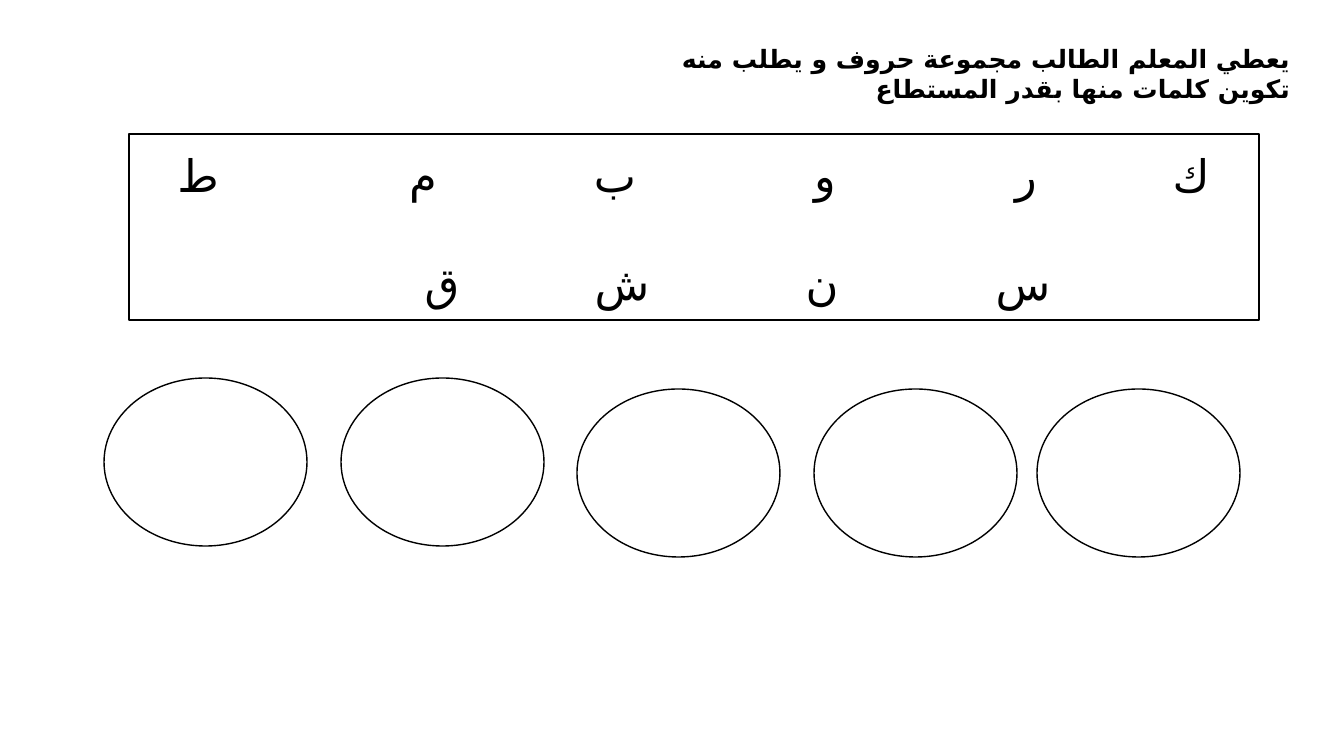
from dataclasses import dataclass

from lxml.etree import SubElement
from pptx import Presentation
from pptx.dml.color import RGBColor
from pptx.enum.shapes import MSO_SHAPE
from pptx.enum.text import MSO_ANCHOR, MSO_AUTO_SIZE, PP_ALIGN
from pptx.oxml.ns import qn
from pptx.slide import Slide
from pptx.util import Emu, Pt

EMU_PER_PX = 914400 / 100.8
BLACK, WHITE = "000000", "FFFFFF"
ARABIC_FONT = "DejaVu Sans"
INSTRUCTION = "يعطي المعلم الطالب مجموعة حروف و يطلب منه تكوين كلمات منها بقدر المستطاع"
LETTER_SIDE = 80


@dataclass(frozen=True)
class Area:
    left: int
    top: int
    width: int
    height: int

    def emu(self) -> list[Emu]:
        return [px(n) for n in (self.left, self.top, self.width, self.height)]


@dataclass(frozen=True)
class LetterRow:
    middle: int
    centres: dict[str, int]


@dataclass(frozen=True)
class Wording:
    text: str
    font: str
    size: int
    bold: bool
    align: PP_ALIGN
    frame_format: dict[str, object]


LETTER_ROWS = [
    LetterRow(175, {"ك": 1191, "ر": 1026, "و": 825, "ب": 615, "م": 423, "ط": 198}),
    LetterRow(283, {"س": 1023, "ن": 822, "ش": 622, "ق": 442}),
]
LETTER_BANK = Area(129, 134, 1130, 186)
WORD_CIRCLES = [
    Area(left, top, 203, 168)
    for left, top in [(104, 378), (341, 378), (577, 389), (814, 389), (1037, 389)]
]


def px(length: int) -> Emu:
    return Emu(round(length * EMU_PER_PX))


def colour(code: str) -> RGBColor:
    return RGBColor.from_string(code)


def draw_outline(slide: Slide, kind: MSO_SHAPE, area: Area) -> None:
    outline = slide.shapes.add_shape(kind, *area.emu())
    outline.shadow.inherit = False
    outline.fill.solid()
    outline.fill.fore_color.rgb = colour(WHITE)
    outline.line.color.rgb = colour(BLACK)
    outline.line.width = Pt(1)


def write(slide: Slide, area: Area, wording: Wording) -> None:
    frame = slide.shapes.add_textbox(*area.emu()).text_frame
    for name, value in wording.frame_format.items():
        setattr(frame, name, value)
    paragraph = frame.paragraphs[0]
    paragraph.alignment = wording.align
    paragraph._p.get_or_add_pPr().set("rtl", "1")
    run = paragraph.add_run()
    run.text = wording.text
    run.font.color.rgb = colour(BLACK)
    font_format = {"name": wording.font, "size": Pt(wording.size), "bold": wording.bold}
    for name, value in font_format.items():
        setattr(run.font, name, value)
    SubElement(run._r.get_or_add_rPr(), qn("a:cs")).set("typeface", ARABIC_FONT)


def draw_letters(slide: Slide, row: LetterRow) -> None:
    letter_format = {"word_wrap": True, "vertical_anchor": MSO_ANCHOR.MIDDLE}
    half = LETTER_SIDE // 2
    for letter, centre in row.centres.items():
        area = Area(centre - half, row.middle - half, LETTER_SIDE, LETTER_SIDE)
        write(slide, area, Wording(letter, "Calibri", 32, False, PP_ALIGN.CENTER, letter_format))


def main() -> None:
    """Build the worksheet slide for forming words from given letters."""
    deck = Presentation()
    deck.slide_width, deck.slide_height = px(1344), px(756)
    slide = deck.slides.add_slide(deck.slide_layouts[6])
    instruction_format = {"word_wrap": True, "auto_size": MSO_AUTO_SIZE.SHAPE_TO_FIT_TEXT}
    write(
        slide,
        Area(628, 38, 672, 40),
        Wording(INSTRUCTION, "Lato", 18, True, PP_ALIGN.RIGHT, instruction_format),
    )
    draw_outline(slide, MSO_SHAPE.RECTANGLE, LETTER_BANK)
    for row in LETTER_ROWS:
        draw_letters(slide, row)
    for circle in WORD_CIRCLES:
        draw_outline(slide, MSO_SHAPE.OVAL, circle)
    deck.save("out.pptx")


if __name__ == "__main__":
    main()
